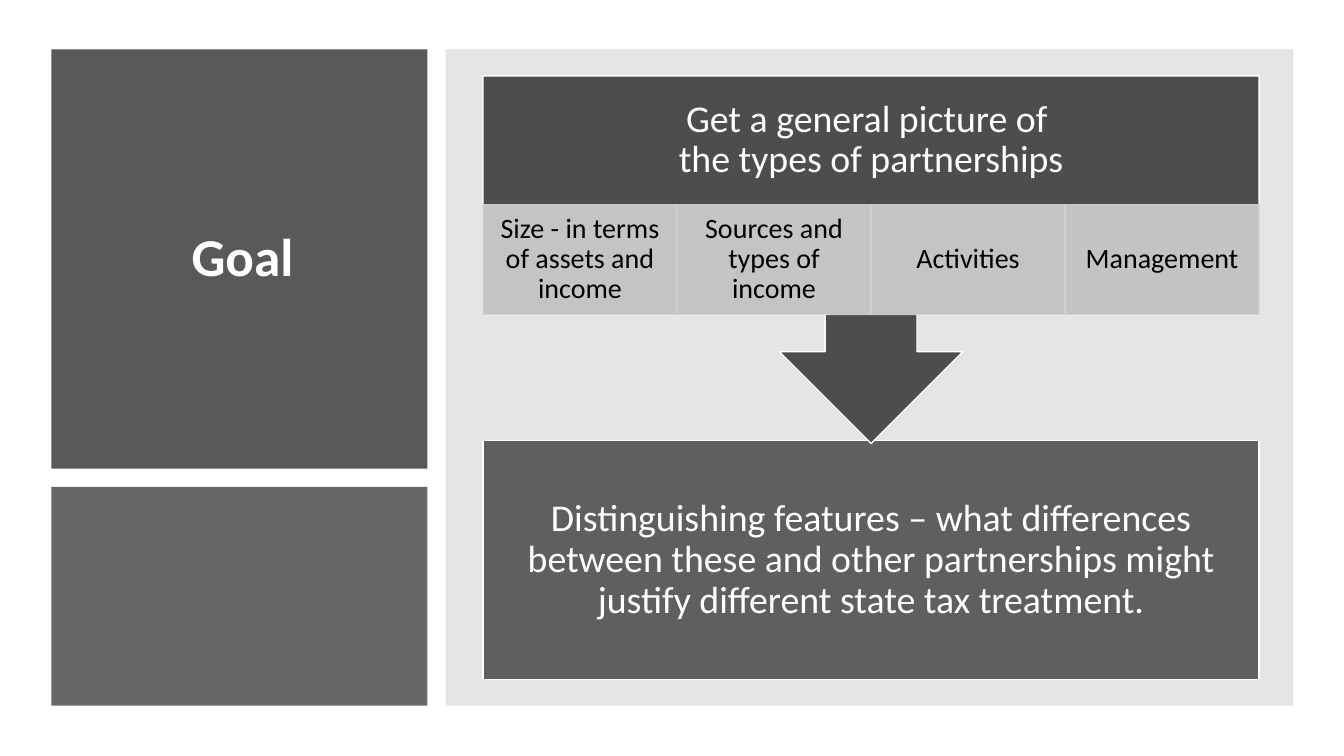
from collections import namedtuple

from lxml import etree
from pptx import Presentation, util as u
from pptx.dml.color import RGBColor
from pptx.enum import shapes, text
from pptx.oxml import ns

COLORS = {
    "title": "595959", "accent": "5F5F5F", "panel": "808080",
    "callout": "4D4D4D", "white": "FFFFFF", "black": "000000",
    "tile_line": "D2D2D2", "tile_first": "D2D2D2",
    "tile_middle": "D1D1D1", "tile_last": "D0D0D0",
}
TILES = [
    ("Size - in terms of assets and income", "tile_first"),
    ("Sources and types of income", "tile_middle"),
    ("Activities", "tile_middle"),
    ("Management", "tile_last"),
]
Box = namedtuple("Box", "left top width height")


def in_points(box):
    """Convert a box to lengths in points."""
    return [u.Pt(value) for value in box]


def paint(fill, color, opacity):
    """Give a fill a solid colour and an opacity in percent."""
    fill.solid()
    fill.fore_color.rgb = RGBColor.from_string(COLORS[color])
    if opacity < 100:
        tone = fill._xPr.find(".//" + ns.qn("a:srgbClr"))
        etree.SubElement(tone, ns.qn("a:alpha"), val=str(opacity * 1000))


def add_block(page, box, color, opacity=100, line=None,
              kind=shapes.MSO_SHAPE.RECTANGLE):
    """Add a filled shape with an optional one-point outline."""
    block = page.shapes.add_shape(kind, *in_points(box))
    block.shadow.inherit = False
    paint(block.fill, color, opacity)
    if line:
        block.line.width = u.Pt(1)
        paint(block.line.fill, line, opacity)
    else:
        block.line.fill.background()
    return block


def write(shape, words, size=27, color="white", bold=False,
          insets=(15, 15, 15, 15)):
    """Write centred text into a shape, breaking at line ends."""
    frame = shape.text_frame
    frame.word_wrap = True
    frame.vertical_anchor = text.MSO_ANCHOR.MIDDLE
    (frame.margin_left, frame.margin_top,
     frame.margin_right, frame.margin_bottom) = in_points(insets)
    para = frame.paragraphs[0]
    para.alignment = text.PP_ALIGN.CENTER
    para.line_spacing = 0.9
    for index, part in enumerate(words.split("\n")):
        if index:
            para.add_line_break()
        span = para.add_run()
        span.text = part
        span.font.name = "Calibri"
        span.font.size = u.Pt(size)
        span.font.bold = bold
        span.font.color.rgb = RGBColor.from_string(COLORS[color])


def add_sidebar(page, box):
    """Place the title block and the plain block below it."""
    title_height, gap = 299.5, 13
    title = add_block(page, box._replace(height=title_height), "title")
    write(title, "Goal", size=38, bold=True, insets=(32, 26, 27.5, 26))
    offset = title_height + gap
    add_block(page, Box(box.left, box.top + offset, box.width,
                        box.height - offset), "accent", opacity=95)


def add_tiles(page, box):
    """Place the topic tiles side by side."""
    width = box.width / len(TILES)
    for index, (words, color) in enumerate(TILES):
        tile = add_block(page, Box(box.left + index * width, box.top, width,
                                   box.height),
                         color, opacity=90, line="tile_line")
        write(tile, words, size=20, color="black", insets=(11.5, 2, 11.5, 2))


def add_process(page, box):
    """Place the panel with the callout, its tiles and the conclusion."""
    add_block(page, box, "panel", opacity=20)
    left, width = box.left + 26.7, 554.4
    top = box.top + 18.9
    conclusion = add_block(page, Box(left, box.top + 279.4, width, 170.6),
                           "accent", line="white")
    write(conclusion, "Distinguishing features – what differences between "
          "these and other partnerships might justify different state tax "
          "treatment.")
    callout = add_block(page, Box(left, top, width, 262.6), "callout",
                        line="white",
                        kind=shapes.MSO_SHAPE.UP_ARROW_CALLOUT)
    callout.rotation = 180
    heading = Box(left, top, width, 92)
    write(page.shapes.add_textbox(*in_points(heading)),
          "Get a general picture of \nthe types of partnerships")
    add_tiles(page, Box(left, top + heading.height, width, 78.5))


def main():
    """Build the slide and save the deck."""
    deck = Presentation()
    deck.slide_width, deck.slide_height = u.Pt(960), u.Pt(540)
    page = deck.slides.add_slide(deck.slide_layouts[6])
    add_sidebar(page, Box(36.7, 35.3, 268.6, 468.7))
    add_process(page, Box(318.3, 35.3, 605.5, 468.7))
    deck.save("out.pptx")


if __name__ == "__main__":
    main()
